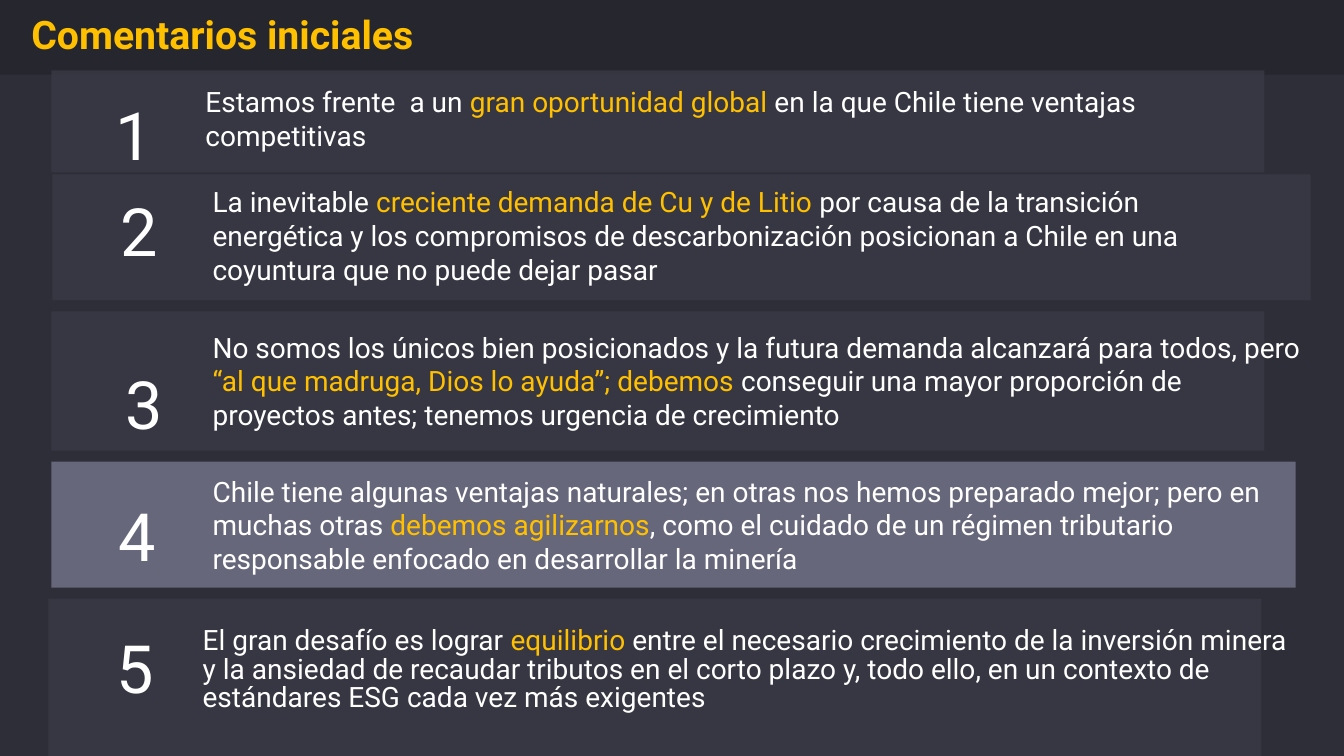
from dataclasses import dataclass

from lxml.etree import SubElement
from pptx import Presentation
from pptx.dml.color import RGBColor
from pptx.enum.shapes import MSO_SHAPE as Preset
from pptx.enum.text import MSO_ANCHOR as Anchor, MSO_AUTO_SIZE as Fit, PP_ALIGN as Align
from pptx.oxml.ns import qn
from pptx.util import Inches, Pt

WIDTH, HEIGHT = Inches(13.33), Inches(7.5)
FONT = "Roboto"
WHITE, GOLD = "FFFFFF", "FFC000"
BACKGROUND, HEADER = "2E2E38", "26262E"
PANEL, ACTIVE_PANEL = "3B3B47", "797991"
PANEL_OPACITY = 77


@dataclass(frozen=True)
class Area:
    """Percentages of the slide's width and height."""
    left: float
    top: float
    width: float
    height: float

    def lengths(self) -> tuple[int, int, int, int]:
        return (across(self.left), down(self.top), across(self.width), down(self.height))


@dataclass(frozen=True)
class Comment:
    panel: Area
    number: Area
    body: Area
    before: str
    key: str
    after: str
    fill: str = PANEL
    compact: bool = False


def across(percent: float) -> int:
    return round(WIDTH * percent / 100)


def down(percent: float) -> int:
    return round(HEIGHT * percent / 100)


def colour(value: str) -> RGBColor:
    return RGBColor.from_string(value)


def style(span, size: float, ink: str, bold: bool = False) -> None:
    span.font.name = FONT
    span.font.size = Pt(size)
    span.font.bold = bold
    span.font.color.rgb = colour(ink)


def add_panel(page, area: Area, fill: str, opacity: int = 100) -> None:
    panel = page.shapes.add_shape(Preset.RECTANGLE, *area.lengths())
    panel.shadow.inherit = False
    panel.line.fill.background()
    panel.fill.solid()
    panel.fill.fore_color.rgb = colour(fill)
    if opacity < 100:
        tint = panel.element.spPr.find(qn("a:solidFill"))[0]
        SubElement(tint, qn("a:alpha"), val=str(opacity * 1000))


def add_box(page, area: Area):
    box = page.shapes.add_textbox(*area.lengths())
    frame = box.text_frame
    frame.word_wrap = True
    frame.auto_size = Fit.SHAPE_TO_FIT_TEXT
    frame.vertical_anchor = Anchor.MIDDLE
    return frame


def add_comment(page, position: int, comment: Comment) -> None:
    add_panel(page, comment.panel, comment.fill, PANEL_OPACITY)

    para = add_box(page, comment.number).paragraphs[0]
    para.text = str(position)
    para.alignment = Align.CENTER
    style(para.runs[0], 47.5, WHITE)

    frame = add_box(page, comment.body)
    para = frame.paragraphs[0]
    if comment.compact:
        frame.vertical_anchor = Anchor.TOP
        frame.margin_left = frame.margin_right = frame.margin_bottom = 0
        frame.margin_top = down(0.53)
        para.line_spacing = 0.85
        para.space_after = Pt(6)
    for text, ink in ((comment.before, WHITE), (comment.key, GOLD), (comment.after, WHITE)):
        span = para.add_run()
        span.text = text
        style(span, 20, ink)


def add_title(page, text: str) -> None:
    area = Area(0, 0, 91.37, 9.87)
    add_panel(page, Area(0, 0, 100, area.height), HEADER)
    title = page.shapes.title
    page.shapes.element.append(title.element)
    title.left, title.top, title.width, title.height = area.lengths()
    frame = title.text_frame
    frame.text = text
    frame.vertical_anchor = Anchor.MIDDLE
    frame.margin_left = across(2.33)
    frame.margin_top = frame.margin_right = frame.margin_bottom = 0
    para = frame.paragraphs[0]
    para.alignment = Align.LEFT
    para.line_spacing = 0.85
    style(para.runs[0], 28, GOLD, bold=True)


COMMENTS = (
    Comment(
        Area(3.83, 9.33, 90.25, 13.47), Area(5.93, 11.73, 8.1, 12),
        Area(14.55, 10.53, 82.97, 10.27),
        "Estamos frente  a un ", "gran oportunidad global",
        " en la que Chile tiene ventajas competitivas",
    ),
    Comment(
        Area(3.9, 23.07, 93.62, 16.67), Area(7.65, 24.4, 5.4, 12),
        Area(15.08, 23.73, 77.27, 14.8),
        "La inevitable ", "creciente demanda de Cu y de Litio",
        " por causa de la transición energética y los compromisos de descarbonización "
        "posicionan a Chile en una coyuntura que no puede dejar pasar",
    ),
    Comment(
        Area(3.83, 41.2, 90.25, 18.4), Area(6.45, 47.33, 8.55, 12),
        Area(15.08, 42.93, 83.2, 14.8),
        "No somos los únicos bien posicionados y la futura demanda alcanzará para todos, pero ",
        "“al que madruga, Dios lo ayuda”; debemos ",
        "conseguir una mayor proporción de proyectos antes; tenemos urgencia de crecimiento",
    ),
    Comment(
        Area(3.83, 61.07, 92.57, 16.67), Area(6.45, 64.8, 7.5, 12),
        Area(15.08, 62, 81.32, 14.8),
        "Chile tiene algunas ventajas naturales; en otras nos hemos preparado mejor; "
        "pero en muchas otras ",
        "debemos agilizarnos",
        ", como el cuidado de un régimen tributario responsable enfocado en desarrollar la minería",
        fill=ACTIVE_PANEL,
    ),
    Comment(
        Area(3.6, 79.2, 90.25, 20.8), Area(4.73, 82.27, 10.73, 12),
        Area(15.08, 82.53, 80.95, 15.33),
        "El gran desafío es lograr ", "equilibrio",
        " entre el necesario crecimiento de la inversión minera y la ansiedad de recaudar "
        "tributos en el corto plazo y, todo ello, en un contexto de estándares ESG "
        "cada vez más exigentes",
        compact=True,
    ),
)


def main() -> None:
    deck = Presentation()
    deck.slide_width, deck.slide_height = WIDTH, HEIGHT
    page = deck.slides.add_slide(deck.slide_layouts.get_by_name("Title Only"))
    page.background.fill.solid()
    page.background.fill.fore_color.rgb = colour(BACKGROUND)
    add_title(page, "Comentarios iniciales")
    for position, comment in enumerate(COMMENTS, start=1):
        add_comment(page, position, comment)
    deck.save("out.pptx")


if __name__ == "__main__":
    main()
